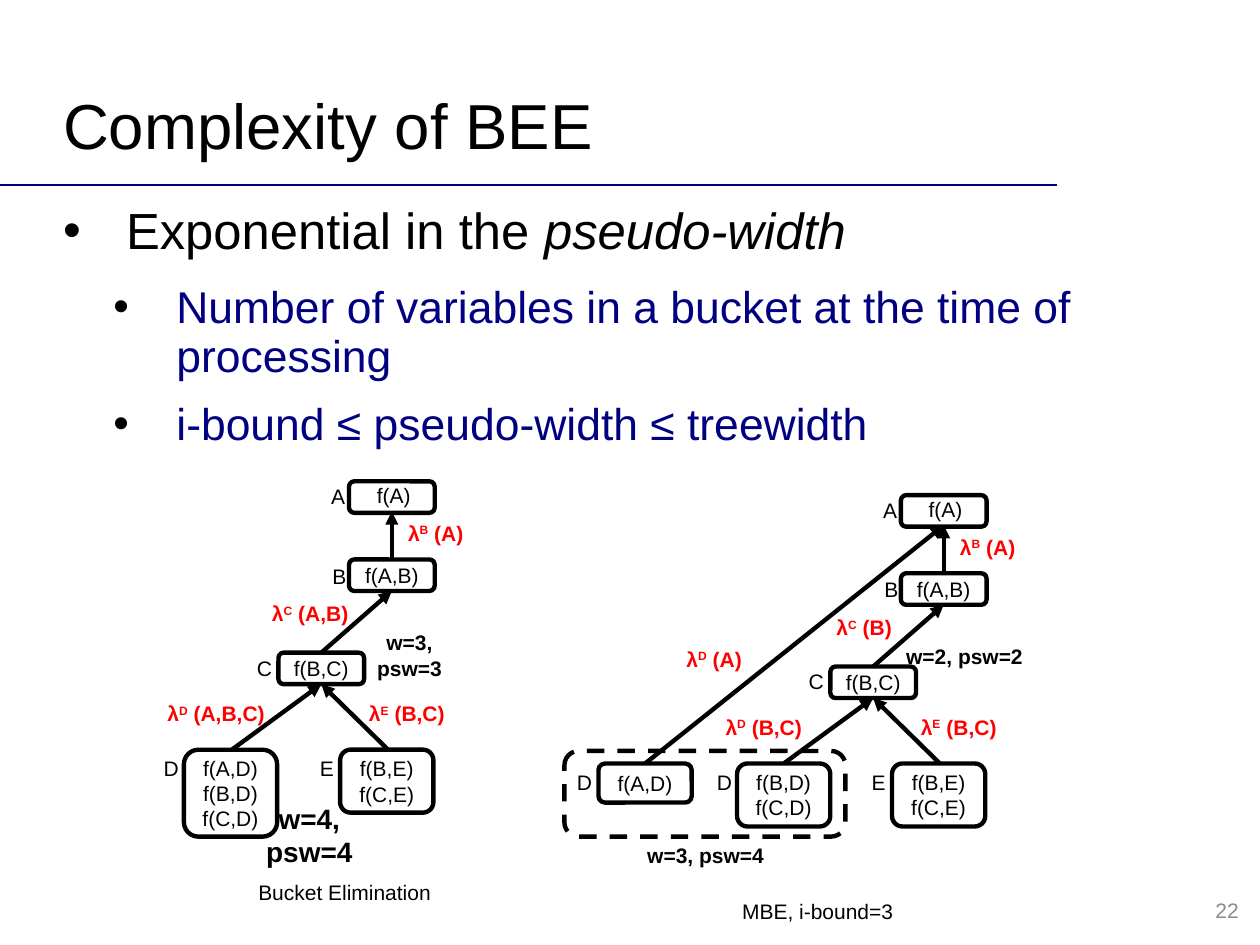
from lxml import etree
from pptx import Presentation
from pptx.dml.color import RGBColor
from pptx.enum.dml import MSO_LINE
from pptx.enum.shapes import MSO_CONNECTOR, MSO_SHAPE
from pptx.enum.text import MSO_ANCHOR, MSO_AUTO_SIZE, PP_ALIGN
from pptx.oxml.ns import qn
from pptx.util import Pt

PX = 9144
BLACK, NAVY, RED, GRAY = "000000", "000080", "FF0000", "8C8C8C"
color = RGBColor.from_string


def format_text(text_frame, size=12, text_color=BLACK, bold=False, align=PP_ALIGN.CENTER):
    for paragraph in text_frame.paragraphs:
        paragraph.alignment = align
        for run in paragraph.runs:
            run.font.name = "Arial"
            run.font.size = Pt(size)
            run.font.bold = bold
            run.font.color.rgb = color(text_color)


def add_text_frame(left, top, width, height, text, wrap=True):
    box = slide.shapes.add_textbox(left * PX, top * PX, width * PX, height * PX)
    box.text_frame.word_wrap = wrap
    box.text_frame.text = text
    return box.text_frame


presentation = Presentation()
presentation.slide_width = 1000 * PX
presentation.slide_height = 750 * PX
slide = presentation.slides.add_slide(presentation.slide_layouts[1])

title, body = slide.placeholders
for placeholder, box, top_margin in ((title, (50, 68, 902, 68), 0), (body, (50, 159, 900, 435), 3)):
    placeholder.left, placeholder.top, placeholder.width, placeholder.height = (n * PX for n in box)
    frame = placeholder.text_frame
    frame.auto_size = MSO_AUTO_SIZE.NONE
    frame.margin_left = frame.margin_right = frame.margin_bottom = 0
    frame.margin_top = top_margin * PX

title.text_frame.text = "Complexity of BEE"
title.text_frame.vertical_anchor = MSO_ANCHOR.MIDDLE
title.text_frame.paragraphs[0].line_spacing = 0.93
format_text(title.text_frame, 36.3, align=PP_ALIGN.LEFT)

bullets = [
    (0, 50, 29, BLACK, 12.9, ["Exponential in the ", "pseudo-width"]),
    (1, 90, 25.4, NAVY, 10.3, ["Number of variables in a bucket at the time of processing"]),
    (1, 90, 25.4, NAVY, 10.3, ["i-bound ≤ pseudo-width ≤ treewidth"]),
]
for index, (level, indent, size, text_color, space_after, texts) in enumerate(bullets):
    frame = body.text_frame
    paragraph = frame.add_paragraph() if index else frame.paragraphs[0]
    paragraph.level = level
    properties = paragraph._p.get_or_add_pPr()
    properties.set("marL", str(indent * PX))
    properties.set("indent", str(-50 * PX))
    bullet_color = etree.SubElement(properties, qn("a:buClr"))
    etree.SubElement(bullet_color, qn("a:srgbClr")).set("val", BLACK)
    etree.SubElement(properties, qn("a:buFont")).set("typeface", "Arial")
    etree.SubElement(properties, qn("a:buChar")).set("char", "•")
    paragraph.alignment = PP_ALIGN.LEFT
    paragraph.line_spacing = 0.93
    paragraph.space_before = Pt(0)
    paragraph.space_after = Pt(space_after)
    for text in texts:
        run = paragraph.add_run()
        run.text = text
        run.font.name = "Arial"
        run.font.size = Pt(size)
        run.font.italic = text == "pseudo-width"
        run.font.color.rgb = color(text_color)

tree_nodes = [
    ("A", 253, 379, 277, 382, 68, 25, ""),
    ("B", 254, 442, 277, 444, 68, 25, "f(A,B)"),
    ("C", 194, 515, 221, 518, 68, 25, "f(B,C)"),
    ("E", 244, 595, 270, 595, 74, 50, "f(B,E)\nf(C,E)"),
]
tree_arrows = [
    (184, 595, 255, 543),
    (308, 595, 255, 543),
    (255, 518, 311, 469),
    (311, 444, 311, 406),
]
nodes = [
    ("D", 120, 595, 146, 595, 74, 69, "f(A,D)\nf(B,D)\nf(C,D)"),
    ("D", 559, 606, 585, 606, 74, 50, "f(B,D)\nf(C,D)"),
    ("D", 448, 606, 475, 606, 74, 31, "f(A,D)"),
]
arrows = [(512, 606, 749, 417)]
messages = [
    (123, 551, 99, "D", "(A,B,C)"),
    (206, 472, 82, "C", "(A,B)"),
    (566, 562, 82, "D", "(B,C)"),
    (654, 483, 66, "C", "(B)"),
    (535, 508, 66, "D", "(A)"),
]
captions = [
    (168, 693, 211, 30, "Bucket Elimination", 12, False),
    (541, 708, 216, 30, "MBE, i-bound=3", 12, False),
    (261, 495, 128, 50, "w=3,\npsw=3", 12, True),
    (178, 631, 135, 64, "w=4,\npsw=4", 16, True),
    (707, 506, 117, 30, "w=2, psw=2", 12, True),
    (498, 664, 124, 30, "w=3, psw=4", 12, True),
]
for dx, dy in ((0, 0), (438, 11)):
    for name, name_x, name_y, x, y, width, height, functions in tree_nodes:
        nodes.append((name, name_x + dx, name_y + dy, x + dx, y + dy, width, height, functions))
    for x1, y1, x2, y2 in tree_arrows:
        arrows.append((x1 + dx, y1 + dy, x2 + dx, y2 + dy))
    messages.append((314 + dx, 408 + dy, 66, "B", "(A)"))
    messages.append((283 + dx, 551 + dy, 82, "E", "(B,C)"))
    captions.append((289 + dx, 378 + dy, 47, 30, "f(A)", 12, False))

outlines = [(*node[3:], None) for node in nodes]
outlines.append((448, 596, 223, 68, "", MSO_LINE.DASH))
for left, top, width, height, text, dash in outlines:
    shape = slide.shapes.add_shape(
        MSO_SHAPE.ROUNDED_RECTANGLE, left * PX, top * PX, width * PX, height * PX)
    shape.shadow.inherit = False
    shape.fill.background()
    shape.line.color.rgb = color(BLACK)
    shape.line.width = Pt(2.5)
    if dash:
        shape.line.dash_style = dash
    frame = shape.text_frame
    frame.margin_left = frame.margin_right = frame.margin_top = frame.margin_bottom = 0
    frame.vertical_anchor = MSO_ANCHOR.MIDDLE
    frame.text = text
    format_text(frame)

for name, left, top, *_ in nodes:
    format_text(add_text_frame(left, top, 31, 30, name, wrap=False), align=PP_ALIGN.LEFT)

lines = [(arrow, BLACK, 2.5) for arrow in arrows] + [((0, 147, 839, 147), NAVY, 1.45)]
for ends, line_color, width in lines:
    connector = slide.shapes.add_connector(MSO_CONNECTOR.STRAIGHT, *(n * PX for n in ends))
    connector.line.color.rgb = color(line_color)
    connector.line.width = Pt(width)
    etree.SubElement(connector._element.spPr, qn("a:effectLst"))
    if ends in arrows:
        tail = etree.SubElement(connector.line._get_or_add_ln(), qn("a:tailEnd"))
        tail.set("type", "triangle")

for left, top, width, variable, scope in messages:
    frame = add_text_frame(left, top, width, 30, "λ", wrap=False)
    superscript = frame.paragraphs[0].add_run()
    superscript.text = variable
    superscript._r.get_or_add_rPr().set("baseline", "30000")
    frame.paragraphs[0].add_run().text = " " + scope
    format_text(frame, text_color=RED, bold=True, align=PP_ALIGN.LEFT)

for left, top, width, height, text, size, bold in captions:
    format_text(add_text_frame(left, top, width, height, text), size, bold=bold)

page_number = add_text_frame(768, 702, 225, 40, "22")
page_number.vertical_anchor = MSO_ANCHOR.MIDDLE
format_text(page_number, text_color=GRAY, align=PP_ALIGN.RIGHT)

presentation.save("out.pptx")
